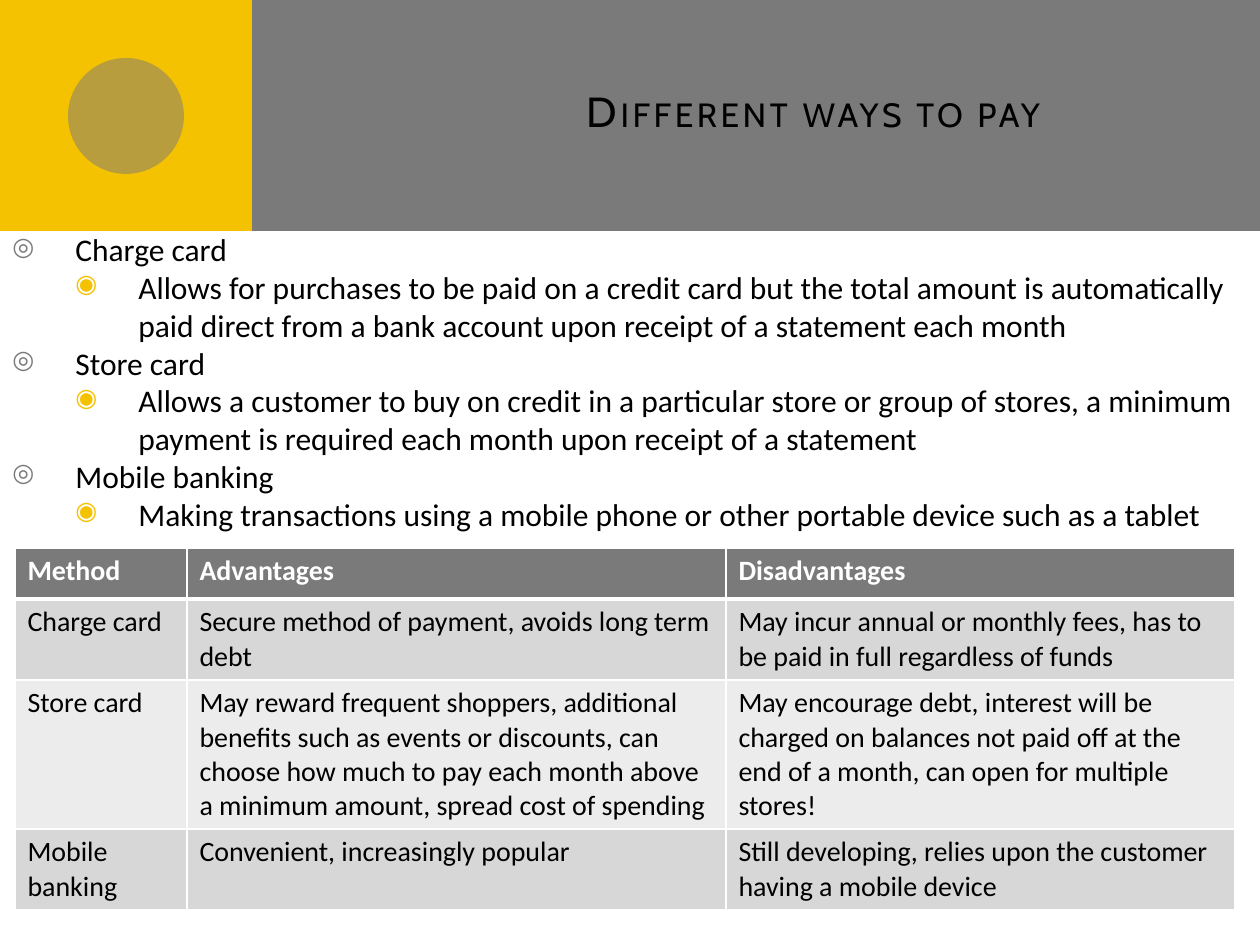
from lxml import etree
from pptx import Presentation
from pptx import util as u
from pptx.dml.color import RGBColor
from pptx.enum import shapes, text
from pptx.oxml import ns

PX = 914400 // 126
COLORS = {"gray": "7A7A7A", "yellow": "F5C201", "white": "FFFFFF",
          "black": "000000", "dark_band": "D7D7D7", "light_band": "ECECEC"}


def rgb(name):
    return RGBColor.from_string(COLORS[name])


def add_xml(parent, tag, **attributes):
    return etree.SubElement(parent, ns.qn(tag), attributes)


deck = Presentation()
deck.slide_width, deck.slide_height = u.Inches(10), u.Inches(7.5)
page = deck.slides.add_slide(deck.slide_layouts[6])

# Header band, yellow square and translucent circle
kinds = shapes.MSO_SHAPE
for kind, color, left, top, width, height in [
    (kinds.RECTANGLE, "gray", 0, 0, 1260, 231),
    (kinds.RECTANGLE, "yellow", 0, 0, 252, 231),
    (kinds.OVAL, "gray", 68, 58, 116, 116),
]:
    shape = page.shapes.add_shape(kind, left * PX, top * PX, width * PX, height * PX)
    shape.shadow.inherit = False
    shape.fill.solid()
    shape.fill.fore_color.rgb = rgb(color)
    shape.line.fill.background()
circle_color = shape.fill._xPr.find(".//" + ns.qn("a:srgbClr"))
add_xml(circle_color, "a:alpha", val="50000")

# Title
title = page.shapes.add_textbox(336 * PX, 32 * PX, 861 * PX, 158 * PX)
frame = title.text_frame
frame.word_wrap = True
frame.vertical_anchor = text.MSO_ANCHOR.MIDDLE
frame.margin_right = 83 * PX
para = frame.paragraphs[0]
para.alignment = text.PP_ALIGN.RIGHT
span = para.add_run()
span.text = "Different ways to pay"
span.font.name, span.font.size = "Cabin", u.Pt(24)
span.font.color.rgb = rgb("black")
properties = span._r.get_or_add_rPr()
properties.set("cap", "small")
properties.set("spc", "200")

# Definitions as a two-level list
definitions = [
    (0, "Charge card"),
    (1, "Allows for purchases to be paid on a credit card but the total amount is "
        "automatically paid direct from a bank account upon receipt of a statement each month"),
    (0, "Store card"),
    (1, "Allows a customer to buy on credit in a particular store or group of stores, "
        "a minimum payment is required each month upon receipt of a statement"),
    (0, "Mobile banking"),
    (1, "Making transactions using a mobile phone or other portable device such as a tablet"),
]
bullets = [("◎", "gray"), ("◉", "yellow")]
body = page.shapes.add_textbox(0, 224 * PX, 1260 * PX, 625 * PX)
frame = body.text_frame
frame.word_wrap = True
for index, (level, wording) in enumerate(definitions):
    para = frame.add_paragraph() if index else frame.paragraphs[0]
    para.text = wording
    para.level = level
    para.font.name, para.font.size = "Calibri", u.Pt(18)
    para.font.color.rgb = rgb("black")
    symbol, color = bullets[level]
    properties = para._p.get_or_add_pPr()
    properties.set("marL", str((level + 1) * 63 * PX))
    properties.set("indent", str(-63 * PX))
    marks = etree.Element("marks")
    add_xml(add_xml(marks, "a:buClr"), "a:srgbClr", val=COLORS[color])
    add_xml(marks, "a:buSzPct", val="80000")
    add_xml(marks, "a:buChar", char=symbol)
    for position, mark in enumerate(list(marks)):
        properties.insert(position, mark)

# Comparison table
rows = [
    ("Method", "Advantages", "Disadvantages"),
    ("Charge card", "Secure method of payment, avoids long term debt",
     "May incur annual or monthly fees, has to be paid in full regardless of funds"),
    ("Store card",
     "May reward frequent shoppers, additional benefits such as events or discounts, "
     "can choose how much to pay each month above a minimum amount, spread cost of spending",
     "May encourage debt, interest will be charged on balances not paid off at the end "
     "of a month, can open for multiple stores!"),
    ("Mobile banking", "Convenient, increasingly popular",
     "Still developing, relies upon the customer having a mobile device"),
]
widths, heights = [172, 539, 509], [51, 81, 149, 81]
fills = ["gray", "dark_band", "light_band", "dark_band"]
table = page.shapes.add_table(len(rows), len(widths), 15 * PX, 548 * PX,
                              sum(widths) * PX, sum(heights) * PX).table
for column, width in zip(table.columns, widths):
    column.width = width * PX
for r, wordings in enumerate(rows):
    table.rows[r].height = heights[r] * PX
    for c, wording in enumerate(wordings):
        cell = table.cell(r, c)
        cell.text = wording
        font = cell.text_frame.paragraphs[0].font
        font.name, font.size, font.bold = "Calibri", u.Pt(16), r == 0
        font.color.rgb = rgb("black" if r else "white")
        properties = cell._tc.get_or_add_tcPr()
        for side in "LRTB":
            # The rule under the header is thicker
            thick = (r, side) in [(0, "B"), (1, "T")]
            line = add_xml(properties, "a:ln" + side, w=str(u.Pt(3 if thick else 1)))
            add_xml(add_xml(line, "a:solidFill"), "a:srgbClr", val=COLORS["white"])
        cell.fill.solid()
        cell.fill.fore_color.rgb = rgb(fills[r])

deck.save("out.pptx")
